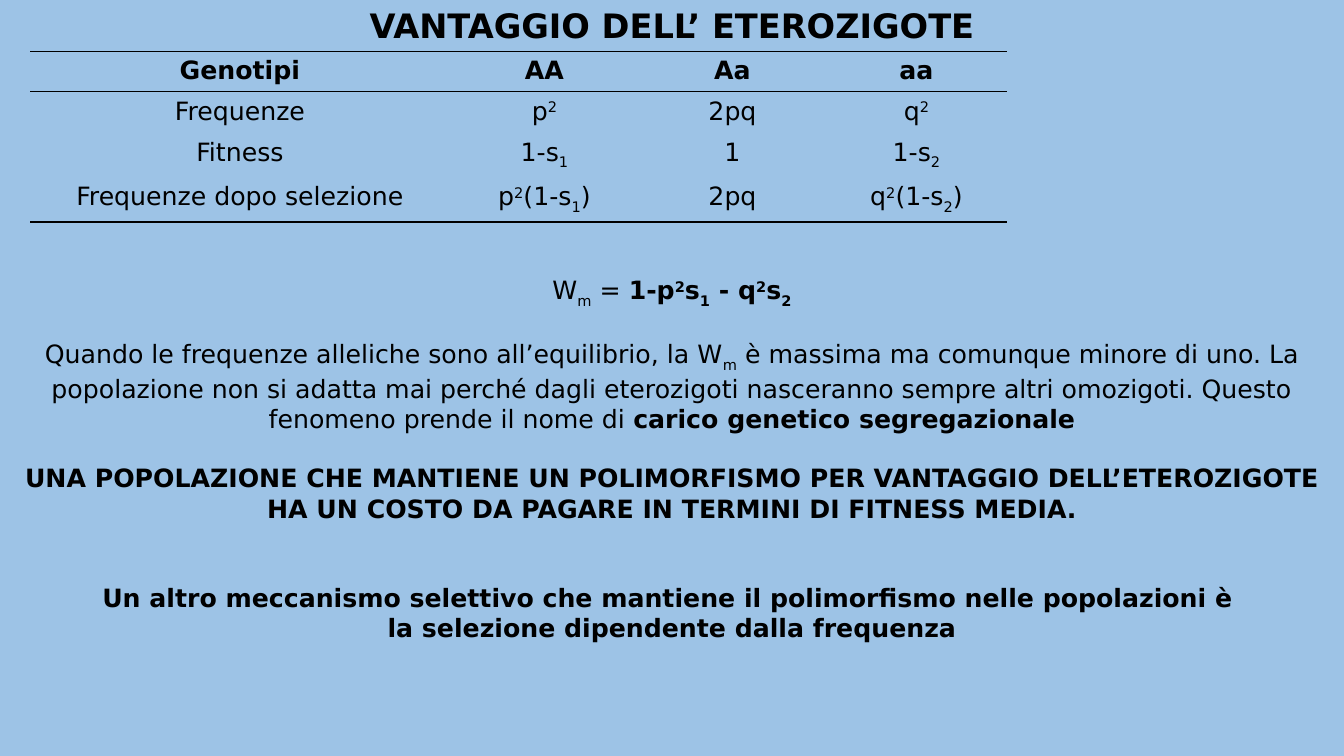
from dataclasses import dataclass
from itertools import groupby

from lxml import etree
from pptx import Presentation
from pptx import util as u
from pptx.dml.color import RGBColor
from pptx.enum import text
from pptx.oxml import ns

COLORS = {"background": "9DC3E6", "ink": "000000"}
FONT = "DejaVu Sans"
NO_STYLE = "{2D5ABB26-0587-4C30-8999-92F81FD0307C}"
SHIFTED = {"²": ("2", 30000), "₁": ("1", -25000), "₂": ("2", -25000), "ₘ": ("m", -25000)}
LINE = 21


@dataclass
class Span:
    text: str
    bold: bool = False


@dataclass
class Para:
    spans: list[Span]
    before: float = 0


@dataclass
class Box:
    left: float
    top: float
    width: float
    height: float
    paras: list[Para]
    size: float = 18
    anchor: text.MSO_ANCHOR = text.MSO_ANCHOR.TOP
    auto_size: text.MSO_AUTO_SIZE = text.MSO_AUTO_SIZE.NONE
    inset_top: float = 0.05
    inset_bottom: float = 0.05


def add_text(p, content: str, *, size: float = 18, bold: bool = False) -> None:
    p.alignment = text.PP_ALIGN.CENTER
    pieces = [SHIFTED.get(char, (char, 0)) for char in content]
    for base, group in groupby(pieces, key=lambda piece: piece[1]):
        r = p.add_run()
        r.text = "".join(char for char, _ in group)
        r.font.name = FONT
        r.font.size = u.Pt(size)
        r.font.bold = bold
        r.font.color.rgb = RGBColor.from_string(COLORS["ink"])
        if base:
            r.font._element.set("baseline", str(base))


def add_box(s, box: Box) -> None:
    sp = s.shapes.add_textbox(*map(u.Inches, (box.left, box.top, box.width, box.height)))
    tf = sp.text_frame
    tf.word_wrap = True
    tf.auto_size = box.auto_size
    tf.vertical_anchor = box.anchor
    tf.margin_top = u.Inches(box.inset_top)
    tf.margin_bottom = u.Inches(box.inset_bottom)
    for i, para in enumerate(box.paras):
        p = tf.add_paragraph() if i else tf.paragraphs[0]
        if para.before:
            p.space_before = u.Pt(para.before)
        for span in para.spans:
            add_text(p, span.text, size=box.size, bold=span.bold)


def add_border(cell, side: str) -> None:
    tc_pr = cell._tc.get_or_add_tcPr()
    ln = etree.Element(ns.qn(f"a:ln{side}"), w=str(u.Pt(1)))
    fill = etree.SubElement(ln, ns.qn("a:solidFill"))
    etree.SubElement(fill, ns.qn("a:srgbClr"), val=COLORS["ink"])
    tc_pr.insert(len(tc_pr) - 1, ln)


def add_genotype_table(s, rows: list[list[str]], widths: list[float], heights: list[float]) -> None:
    frame = s.shapes.add_table(len(rows), len(widths), u.Inches(0.3), u.Inches(0.51),
                               u.Inches(sum(widths)), u.Inches(sum(heights)))
    table = frame.table
    table.horz_banding = False
    table.first_row = False
    table._tbl.tblPr.find(ns.qn("a:tableStyleId")).text = NO_STYLE
    for column, width in zip(table.columns, widths):
        column.width = u.Inches(width)
    for i, (row, height) in enumerate(zip(rows, heights)):
        table.rows[i].height = u.Inches(height)
        sides = {0: "TB", len(rows) - 1: "B"}.get(i, "")
        for j, content in enumerate(row):
            cell = table.cell(i, j)
            cell.fill.background()
            for side in sides:
                add_border(cell, side)
            add_text(cell.text_frame.paragraphs[0], content, bold=i == 0)


TITLE = Box(0, 0, 13.33, 0.5, [Para([Span("VANTAGGIO DELL’ ETEROZIGOTE", True)])],
            size=24, auto_size=text.MSO_AUTO_SIZE.SHAPE_TO_FIT_TEXT)

GENOTYPES = [
    ["Genotipi", "AA", "Aa", "aa"],
    ["Frequenze", "p²", "2pq", "q²"],
    ["Fitness", "1-s₁", "1", "1-s₂"],
    ["Frequenze dopo selezione", "p²(1-s₁)", "2pq", "q²(1-s₂)"],
]

BODY = Box(0, 2.18, 13.33, 5.32, [
    Para([Span("Wₘ = "), Span("1-p²s₁ - q²s₂", True)]),
    Para([Span("Quando le frequenze alleliche sono all’equilibrio, la Wₘ è massima ma comunque "
               "minore di uno. La popolazione non si adatta mai perché dagli eterozigoti nasceranno "
               "sempre altri omozigoti. Questo fenomeno prende il nome di "),
          Span("carico genetico segregazionale", True)], LINE),
    Para([Span("UNA POPOLAZIONE CHE MANTIENE UN POLIMORFISMO PER VANTAGGIO DELL’ETEROZIGOTE "
               "HA UN COSTO DA PAGARE IN TERMINI DI FITNESS MEDIA.", True)], LINE),
    Para([Span("Un altro meccanismo selettivo che mantiene il polimorfismo nelle popolazioni è ",
               True)], 2 * LINE),
    Para([Span("la selezione dipendente dalla frequenza", True)]),
], anchor=text.MSO_ANCHOR.MIDDLE, inset_top=0.34, inset_bottom=0.92)


def main() -> None:
    prs = Presentation()
    prs.slide_width = u.Inches(13.33)
    prs.slide_height = u.Inches(7.5)
    s = prs.slides.add_slide(prs.slide_layouts[6])
    s.background.fill.solid()
    s.background.fill.fore_color.rgb = RGBColor.from_string(COLORS["background"])
    add_box(s, TITLE)
    add_genotype_table(s, GENOTYPES, [4.16, 1.88, 1.85, 1.8], [0.33, 0.41, 0.41, 0.41])
    add_box(s, BODY)
    prs.save("out.pptx")


if __name__ == "__main__":
    main()
